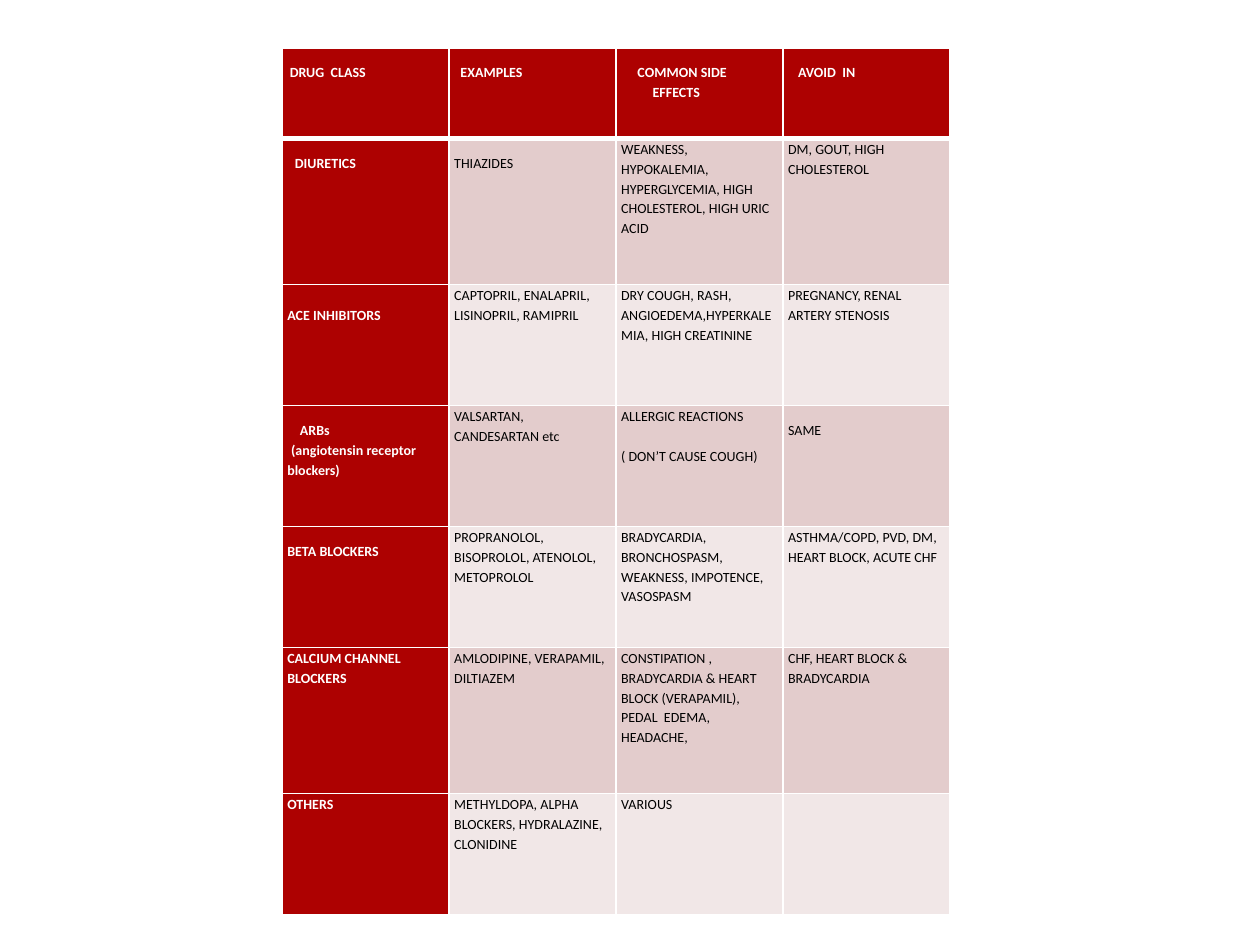
from lxml import etree
from pptx import Presentation
from pptx.dml.color import RGBColor
from pptx.oxml.ns import qn
from pptx.util import Inches, Pt

FONT = "Calibri"
RED, ROSE, PALE = "AD0101", "E3CCCC", "F1E7E7"
WHITE, BLACK = "FFFFFF", "000000"
SMALL_DROP, LINE_DROP = 0.11, 0.16
ROW_HEIGHTS = [0.72, 1.16, 0.96, 0.96, 0.96, 1.16, 0.96]

# Each cell is a list of paragraphs.
ROWS = [
    [["DRUG  CLASS"], ["EXAMPLES"], ["COMMON SIDE", "EFFECTS"], ["AVOID  IN"]],
    [["DIURETICS"], ["THIAZIDES"],
     ["WEAKNESS, HYPOKALEMIA, HYPERGLYCEMIA, HIGH CHOLESTEROL, HIGH URIC ACID"],
     ["DM, GOUT, HIGH CHOLESTEROL"]],
    [["ACE INHIBITORS"], ["CAPTOPRIL, ENALAPRIL, LISINOPRIL, RAMIPRIL"],
     ["DRY COUGH, RASH, ANGIOEDEMA,HYPERKALEMIA, HIGH CREATININE"],
     ["PREGNANCY, RENAL ARTERY STENOSIS"]],
    [["ARBs", "(angiotensin receptor blockers)"], ["VALSARTAN, CANDESARTAN etc"],
     ["ALLERGIC REACTIONS", "( DON’T CAUSE COUGH)"], ["SAME"]],
    [["BETA BLOCKERS"], ["PROPRANOLOL, BISOPROLOL, ATENOLOL, METOPROLOL"],
     ["BRADYCARDIA, BRONCHOSPASM, WEAKNESS, IMPOTENCE, VASOSPASM"],
     ["ASTHMA/COPD, PVD, DM, HEART BLOCK, ACUTE CHF"]],
    [["CALCIUM CHANNEL BLOCKERS"], ["AMLODIPINE, VERAPAMIL, DILTIAZEM"],
     ["CONSTIPATION , BRADYCARDIA & HEART BLOCK (VERAPAMIL),  PEDAL  EDEMA, HEADACHE,"],
     ["CHF, HEART BLOCK & BRADYCARDIA"]],
    [["OTHERS"], ["METHYLDOPA, ALPHA BLOCKERS, HYDRALAZINE, CLONIDINE"], ["VARIOUS"], []],
]

# Cells, by row and column, whose text departs from the plain setting.
TOP_MARGINS = {(0, column): SMALL_DROP for column in range(4)} | {
    (1, 0): SMALL_DROP, (1, 1): SMALL_DROP, (2, 0): LINE_DROP,
    (3, 0): SMALL_DROP, (3, 3): SMALL_DROP, (4, 0): SMALL_DROP,
}
FIRST_LINE_INDENTS = {
    (0, 0): [0.02], (0, 1): [0.05], (0, 2): [0.13, 0.25], (0, 3): [0.08],
    (1, 0): [0.06], (3, 0): [0.1, 0.03],
}
PARAGRAPH_GAPS = {(3, 2): LINE_DROP}


def rgb(color):
    return RGBColor.from_string(color)


def write_text(frame, paragraphs, *, color, bold=False, size=8, indents=(), gap=0):
    for index, text in enumerate(paragraphs):
        para = frame.paragraphs[0] if index == 0 else frame.add_paragraph()
        para.line_spacing = 1.15
        if index and gap:
            para.space_before = Inches(gap)
        if index < len(indents):
            properties = para._p.get_or_add_pPr()
            properties.set("marL", "0")
            properties.set("indent", str(Inches(indents[index])))
        span = para.add_run()
        span.text = text
        span.font.name = FONT
        span.font.size = Pt(size)
        span.font.bold = bold
        span.font.color.rgb = rgb(color)


def set_borders(cell, color, widths):
    """Give widths in points, in the order left, right, top, bottom."""
    properties = cell._tc.get_or_add_tcPr()
    for index, (side, width) in enumerate(zip("LRTB", widths)):
        line = etree.Element(qn(f"a:ln{side}"), w=str(Pt(width)))
        fill = etree.SubElement(line, qn("a:solidFill"))
        etree.SubElement(fill, qn("a:srgbClr"), val=color)
        properties.insert(index, line)


def add_drug_table(page, left, top, width):
    frame = page.shapes.add_table(len(ROWS), len(ROWS[0]), Inches(left), Inches(top),
                                  Inches(width), Inches(sum(ROW_HEIGHTS)))
    table = frame.table
    table.first_col = True
    for column in table.columns:
        column.width = Inches(width / len(ROWS[0]))
    for row_index, row in enumerate(ROWS):
        table.rows[row_index].height = Inches(ROW_HEIGHTS[row_index])
        for column_index, paragraphs in enumerate(row):
            place = row_index, column_index
            cell = table.cell(*place)
            heading = 0 in place
            cell.margin_left = cell.margin_right = Inches(0.04)
            cell.margin_top = Inches(TOP_MARGINS.get(place, 0))
            cell.margin_bottom = 0
            cell.fill.solid()
            cell.fill.fore_color.rgb = rgb(RED if heading else ROSE if row_index % 2 else PALE)
            set_borders(cell, WHITE, (1, 1, 3 if row_index == 1 else 1,
                                      3 if row_index == 0 else 1))
            write_text(cell.text_frame, paragraphs, color=WHITE if heading else BLACK,
                       bold=heading, indents=FIRST_LINE_INDENTS.get(place, ()),
                       gap=PARAGRAPH_GAPS.get(place, 0))


def main():
    deck = Presentation()
    deck.slide_width, deck.slide_height = Inches(10), Inches(7.5)
    page = deck.slides.add_slide(deck.slide_layouts[6])
    add_drug_table(page, 2.24, 0.38, 5.3)
    deck.save("out.pptx")


if __name__ == "__main__":
    main()
